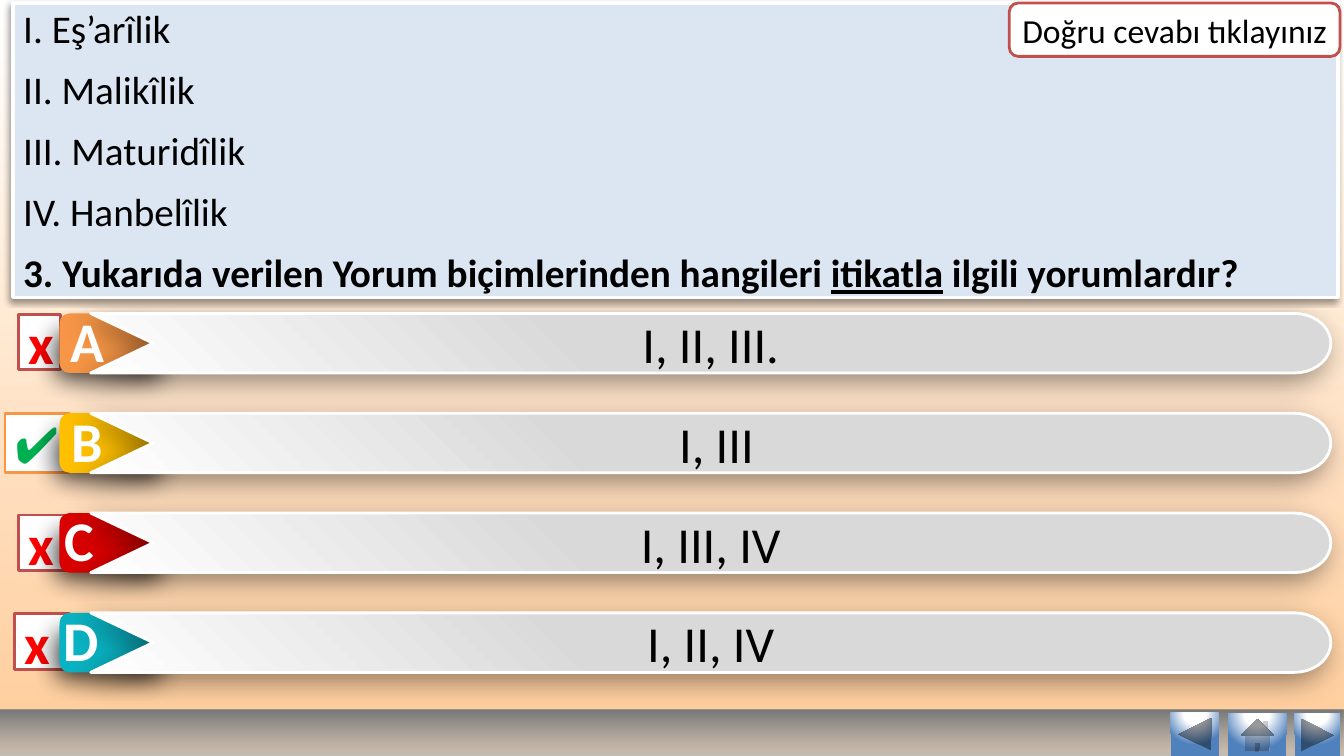
import math

import pptx
import pptx.dml.color
import pptx.enum.shapes
import pptx.enum.text
import pptx.oxml
import pptx.oxml.ns
import pptx.util
from pptx.util import Inches, Pt

KIND = pptx.enum.shapes.MSO_SHAPE
ALIGN = pptx.enum.text.PP_ALIGN
ANCHOR = pptx.enum.text.MSO_ANCHOR
qn = pptx.oxml.ns.qn

HUES = {
    "white": "FFFFFF", "black": "000000", "peach": "FFCC99", "pale": "DCE6F2",
    "brick": "C0504D", "orange": "F79646", "gold": "FFC000", "red": "DA0000",
    "teal": "0AB3C3", "cross": "FF0000", "check": "00B050", "letter": "FEFEFE",
    "grey": "D9D9D9", "silver": "C0C0C0", "ash": "B3B3B3", "slate": "777777",
    "blue": "4F81BD",
}
CROSS = ("x", {"size": Pt(40), "bold": True}, "cross", "brick")
CHECK = ("✔", {"size": Pt(36)}, "check", "orange")
# letter, tab colour, answer, mark, mark box (left, drop, width, height), letter left
ROWS = [
    ("A", "orange", "I, II, III.", CROSS, (0.18, 0.01, 0.42, 0.55), 0.47),
    ("B", "gold", " I, III", CHECK, (0.05, 0, 0.64, 0.59), 0.47),
    ("C", "red", "I, III, IV", CROSS, (0.18, 0.02, 0.55, 0.55), 0.39),
    ("D", "teal", "I, II, IV", CROSS, (0.14, 0.01, 0.55, 0.55), 0.41),
]
TOP, STEP, HIGH = 3.11, 0.99, 0.59
LEFT, RIGHT, NOTCH, CURVE = 0.9, 13.2, 0.62, 0.36
ITEMS = ["I. Eş’arîlik", "II. Malikîlik", "III. Maturidîlik", "IV. Hanbelîlik"]
ASK = [("3. Yukarıda verilen Yorum biçimlerinden hangileri ", False),
       ("itikatla", True), (" ilgili yorumlardır?", False)]


def rgb(name):
    return pptx.dml.color.RGBColor.from_string(HUES[name])


def style(shape, fill=None, line=None, width=2):
    """Set flat fill and line, and drop the theme shadow."""
    shape.shadow.inherit = False
    if fill:
        shape.fill.solid()
        shape.fill.fore_color.rgb = rgb(fill)
    if line:
        shape.line.color.rgb = rgb(line)
        shape.line.width = Pt(width)
    else:
        shape.line.fill.background()


def blend(shape, stops, shade):
    """Swap the flat fill for a gradient of (position, colour, opacity) stops."""
    marks = "".join(
        f'<a:gs pos="{pos * 1000}"><a:srgbClr val="{HUES[hue]}">'
        f'<a:alpha val="{alpha * 1000}"/></a:srgbClr></a:gs>'
        for pos, hue, alpha in stops)
    grad = pptx.oxml.parse_xml(
        f'<a:gradFill {pptx.oxml.ns.nsdecls("a")} rotWithShape="1">'
        f'<a:gsLst>{marks}</a:gsLst>{shade}</a:gradFill>')
    props = shape._element.spPr
    props.replace(props.find(qn("a:solidFill")), grad)


def slant(angle):
    return f'<a:lin ang="{angle * 60000}" scaled="0"/>'


def shade(shape, alpha, blur, dist, angle, scale=100):
    """Cast an outer shadow."""
    size = scale * 1000
    shape._element.spPr.find(qn("a:effectLst")).append(pptx.oxml.parse_xml(
        f'<a:outerShdw {pptx.oxml.ns.nsdecls("a")} blurRad="{Pt(blur)}" '
        f'dist="{Pt(dist)}" dir="{angle * 60000}" sx="{size}" sy="{size}" '
        f'algn="ctr" rotWithShape="0"><a:srgbClr val="{HUES["black"]}">'
        f'<a:alpha val="{alpha * 1000}"/></a:srgbClr></a:outerShdw>'))


def add_run(para, text, hue, form):
    run = para.add_run()
    run.text = text
    run.font.name = "Calibri"
    run.font.color.rgb = rgb(hue)
    for key, value in form.items():
        setattr(run.font, key, value)
    return run


def write(shape, text, hue, form, align=ALIGN.CENTER, anchor=ANCHOR.MIDDLE):
    frame = shape.text_frame
    frame.word_wrap = True
    frame.vertical_anchor = anchor
    para = frame.paragraphs[0]
    para.alignment = align
    return add_run(para, text, hue, form)


def add_box(slide, kind, place, fill, line=None):
    shape = slide.shapes.add_shape(kind, *map(Inches, place))
    style(shape, fill, line)
    return shape


def add_ask(slide):
    box = slide.shapes.title
    places = zip(("left", "top", "width", "height"), (0.13, 0.03, 13.14, 2.92))
    for key, value in places:
        setattr(box, key, Inches(value))
    style(box, "pale", "white", 2.5)
    shade(box, 40, 4, 3, 135)
    frame = box.text_frame
    frame.auto_size = pptx.enum.text.MSO_AUTO_SIZE.NONE
    frame.vertical_anchor = ANCHOR.MIDDLE
    lines = [[(item, None)] for item in ITEMS] + [ASK]
    for num, parts in enumerate(lines):
        para = frame.add_paragraph() if num else frame.paragraphs[0]
        para.alignment = ALIGN.LEFT
        para.space_before = Pt(10)
        for text, under in parts:
            form = {"size": Pt(28), "bold": parts is ASK, "underline": under}
            add_run(para, text, "black", form)


def add_bar(slide, top, text):
    """Draw an answer bar with a notched left and a round right end."""
    half = HIGH / 2
    turns = [math.radians(angle) for angle in range(-90, 91, 10)]
    points = [(RIGHT - CURVE + CURVE * math.cos(turn),
               top + half + half * math.sin(turn)) for turn in turns]
    points += [(LEFT, top + HIGH), (LEFT + NOTCH, top + half)]
    pen = slide.shapes.build_freeform(Inches(LEFT), Inches(top))
    pen.add_line_segments([(Inches(x), Inches(y)) for x, y in points])
    bar = pen.convert_to_shape()
    style(bar, "grey", "white")
    blend(bar, [(0, "white", 100), (40, "grey", 100), (100, "grey", 100)],
          slant(315))
    shade(bar, 40, 20, 7, 135)
    write(bar, text, "black", {"size": Pt(36)})


def add_letter(slide, left, top, text):
    box = slide.shapes.add_textbox(*map(Inches, (left, top, 0.79, 0.77)))
    run = write(box, text, "letter", {"size": Pt(40), "bold": True},
                anchor=ANCHOR.TOP)
    props = run.font._element
    props.set("spc", "50")
    props.insert(0, pptx.oxml.parse_xml(
        f'<a:ln {pptx.oxml.ns.nsdecls("a")} w="{Pt(0.75)}"><a:solidFill>'
        f'<a:srgbClr val="{HUES["white"]}"/></a:solidFill></a:ln>'))


def add_row(slide, top, letter, hue, answer, mark, place, left):
    sign, form, ink, edge = mark
    x, drop, wide, high = place
    box = add_box(slide, KIND.RECTANGLE, (x, top + drop, wide, high),
                  "white", edge)
    write(box, sign, ink, form, ALIGN.LEFT)
    tab = add_box(slide, KIND.ROUNDED_RECTANGLE, (0.59, top, 1.31, HIGH), hue)
    shade(tab, 75, 18, 15, 143, 80)
    add_bar(slide, top, answer)
    add_letter(slide, left, top - 0.12, letter)


def add_footer(slide):
    strip = add_box(slide, KIND.RECTANGLE, (0, 7.04, 13.33, 0.49), "silver")
    blend(strip, [(0, "silver", 100), (17, "ash", 70), (100, "slate", 100)],
          slant(270))
    glow = ('<a:path path="circle"><a:fillToRect l="50000" t="-80000" '
            'r="50000" b="180000"/></a:path>')
    for kind, left, top, wide in (
            (KIND.ACTION_BUTTON_BACK_OR_PREVIOUS, 11.61, 7.07, 0.48),
            (KIND.ACTION_BUTTON_FORWARD_OR_NEXT, 12.84, 7.08, 0.45),
            (KIND.ACTION_BUTTON_HOME, 12.18, 7.08, 0.58)):
        key = add_box(slide, kind, (left, top, wide, 0.43), "blue")
        blend(key, [(0, "white", 100), (35, "white", 100), (100, "blue", 100)],
              glow)


def main():
    deck = pptx.Presentation()
    deck.slide_width, deck.slide_height = Inches(13.33), Inches(7.5)
    slide = deck.slides.add_slide(deck.slide_layouts[5])
    back = slide.background.fill
    back.gradient()
    back.gradient_angle = 270
    for stop, hue, pos in zip(back.gradient_stops, ("white", "peach"), (0, 1)):
        stop.color.rgb = rgb(hue)
        stop.position = pos
    add_ask(slide)
    for num, row in enumerate(ROWS):
        add_row(slide, TOP + STEP * num, *row)
    add_footer(slide)
    hint = add_box(slide, KIND.ROUNDED_RECTANGLE, (10.01, 0.03, 3.28, 0.53),
                   "white", "brick")
    write(hint, "Doğru cevabı tıklayınız", "black", {"size": Pt(24)})
    deck.save("out.pptx")


if __name__ == "__main__":
    main()
